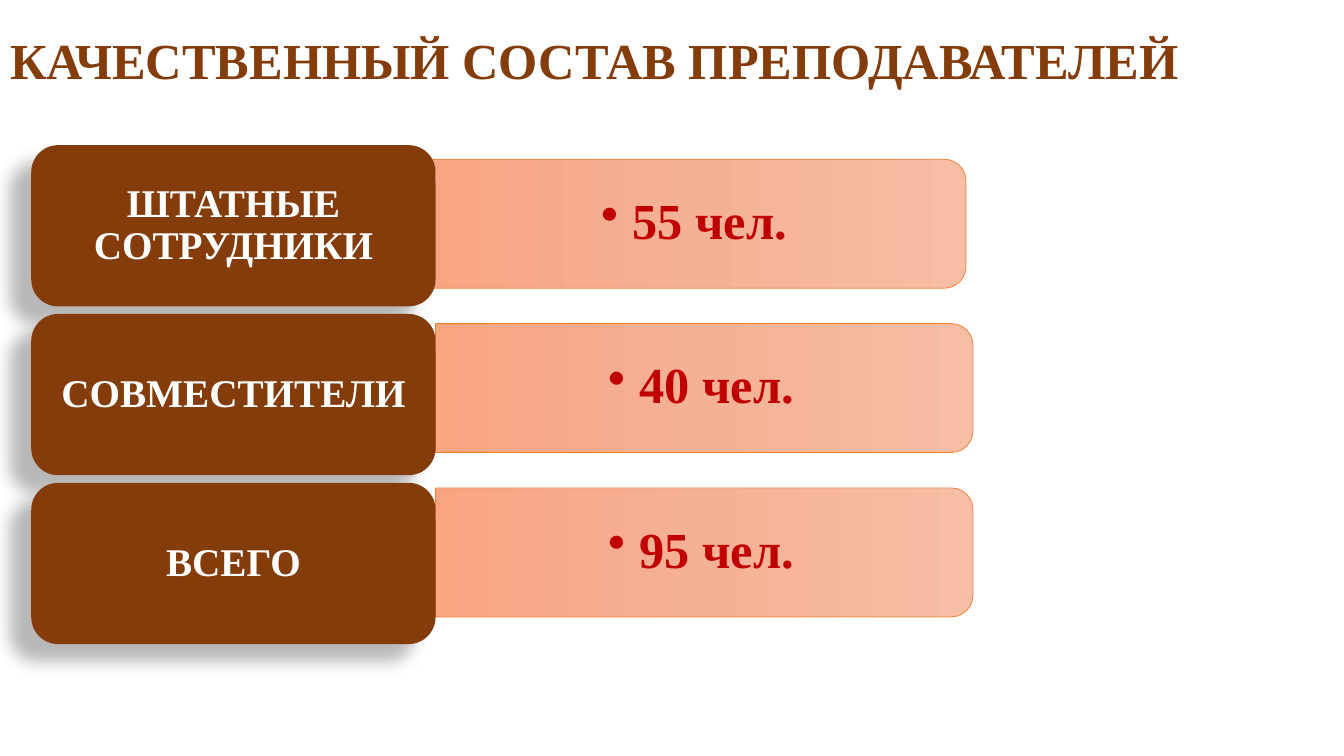
from dataclasses import dataclass

from lxml import etree
from pptx import Presentation
from pptx import util as u
from pptx.dml.color import RGBColor
from pptx.enum import shapes, text
from pptx.oxml import ns, parse_xml


@dataclass(frozen=True)
class Theme:
    font: str = "Times New Roman"
    brown: str = "843C0B"
    red: str = "C00000"
    white: str = "FFFFFF"
    orange: str = "ED7D31"
    shade: str = "000000"
    gradient: tuple = ((0, "F7BDA5"), (50, "F5B196"), (100, "F8A582"))
    large: int = 36
    medium: int = 28


THEME = Theme()
STAFF = [("ШТАТНЫЕ СОТРУДНИКИ", "55 чел.", 4.25),
         ("СОВМЕСТИТЕЛИ", "40 чел.", 4.32),
         ("ВСЕГО", "95 чел.", 4.32)]
LABEL_PITCH, BAR_PITCH = 1.675, 1.63


def apply(target, values):
    for name, value in values.items():
        setattr(target, name, value)


def inches(*lengths):
    return [u.Inches(length) for length in lengths]


def write(frame, words, size, color, align, margins, space_after=None, bullet=False):
    apply(frame, dict(word_wrap=True, auto_size=text.MSO_AUTO_SIZE.NONE,
                      vertical_anchor=text.MSO_ANCHOR.MIDDLE))
    horizontal, vertical = inches(*margins)
    apply(frame, dict(margin_left=horizontal, margin_right=horizontal,
                      margin_top=vertical, margin_bottom=vertical))
    paragraph = frame.paragraphs[0]
    properties = paragraph._p.get_or_add_pPr()
    if space_after:
        after = etree.SubElement(properties, ns.qn("a:spcAft"))
        etree.SubElement(after, ns.qn("a:spcPct"), val=str(space_after * 1000))
    if bullet:
        paragraph.level = 1
        properties.set("marL", str(u.Inches(0.31)))
        properties.set("indent", str(u.Inches(-0.31)))
        etree.SubElement(properties, ns.qn("a:buChar"), char="•")
    apply(paragraph, dict(alignment=align, line_spacing=0.9))
    run = paragraph.add_run()
    run.text = words
    apply(run.font, dict(name=THEME.font, size=u.Pt(size), bold=True))
    run.font.color.rgb = RGBColor.from_string(color)


def add_title(slide, box, words):
    title = slide.shapes.title
    apply(title, dict(zip(("left", "top", "width", "height"), inches(*box))))
    write(title.text_frame, words, THEME.large, THEME.brown,
          text.PP_ALIGN.LEFT, (0.1, 0.05))


def add_bar(slide, box, count):
    left, top, width, height = box
    bar = slide.shapes.add_shape(
        shapes.MSO_SHAPE.ROUND_2_SAME_RECTANGLE,
        *inches(left + (width - height) / 2, top + (height - width) / 2, height, width))
    apply(bar, dict(rotation=90))
    bar.shadow.inherit = False
    stops = "".join(f'<a:gs pos="{position * 1000}"><a:srgbClr val="{color}"/></a:gs>'
                    for position, color in THEME.gradient)
    bar._element.spPr.find(ns.qn("a:prstGeom")).addnext(parse_xml(
        f'<a:gradFill {ns.nsdecls("a")} rotWithShape="1"><a:gsLst>{stops}</a:gsLst>'
        '<a:lin ang="5400000" scaled="0"/></a:gradFill>'))
    bar.line.color.rgb = RGBColor.from_string(THEME.orange)
    bar.line.width = u.Pt(0.5)
    caption = slide.shapes.add_textbox(
        *inches(left, top + 0.06, width - 0.06, height - 0.13))
    write(caption.text_frame, count, THEME.large, THEME.red,
          text.PP_ALIGN.CENTER, (0.27, 0.14), 15, True)


def add_label(slide, box, words):
    left, top, width, height = box
    label = slide.shapes.add_shape(shapes.MSO_SHAPE.ROUNDED_RECTANGLE, *inches(*box))
    label.fill.solid()
    label.fill.fore_color.rgb = RGBColor.from_string(THEME.brown)
    label.line.fill.background()
    label._element.spPr.append(parse_xml(
        f'<a:effectLst {ns.nsdecls("a")}><a:outerShdw blurRad="{u.Pt(11.8)}" '
        f'dist="{u.Pt(19.7)}" dir="{141 * 60000}" algn="ctr" rotWithShape="0">'
        f'<a:srgbClr val="{THEME.shade}"><a:alpha val="28000"/></a:srgbClr>'
        '</a:outerShdw></a:effectLst>'))
    caption = slide.shapes.add_textbox(
        *inches(left + 0.08, top + 0.08, width - 0.16, height - 0.16))
    write(caption.text_frame, words, THEME.medium, THEME.white,
          text.PP_ALIGN.CENTER, (0.12, 0.06), 35)


def add_staff(slide, left, top):
    for row, (group, count, bar_left) in enumerate(STAFF):
        add_bar(slide, (bar_left, top + 0.14 + row * BAR_PITCH, 5.33, 1.28), count)
        add_label(slide, (left, top + row * LABEL_PITCH, 4.01, 1.6), group)


def main():
    deck = Presentation()
    apply(deck, dict(slide_width=u.Inches(13.33), slide_height=u.Inches(7.5)))
    slide = deck.slides.add_slide(deck.slide_layouts[5])
    add_title(slide, (0, 0, 12, 1.25), "КАЧЕСТВЕННЫЙ СОСТАВ ПРЕПОДАВАТЕЛЕЙ")
    add_staff(slide, 0.31, 1.44)
    deck.save("out.pptx")


if __name__ == "__main__":
    main()
